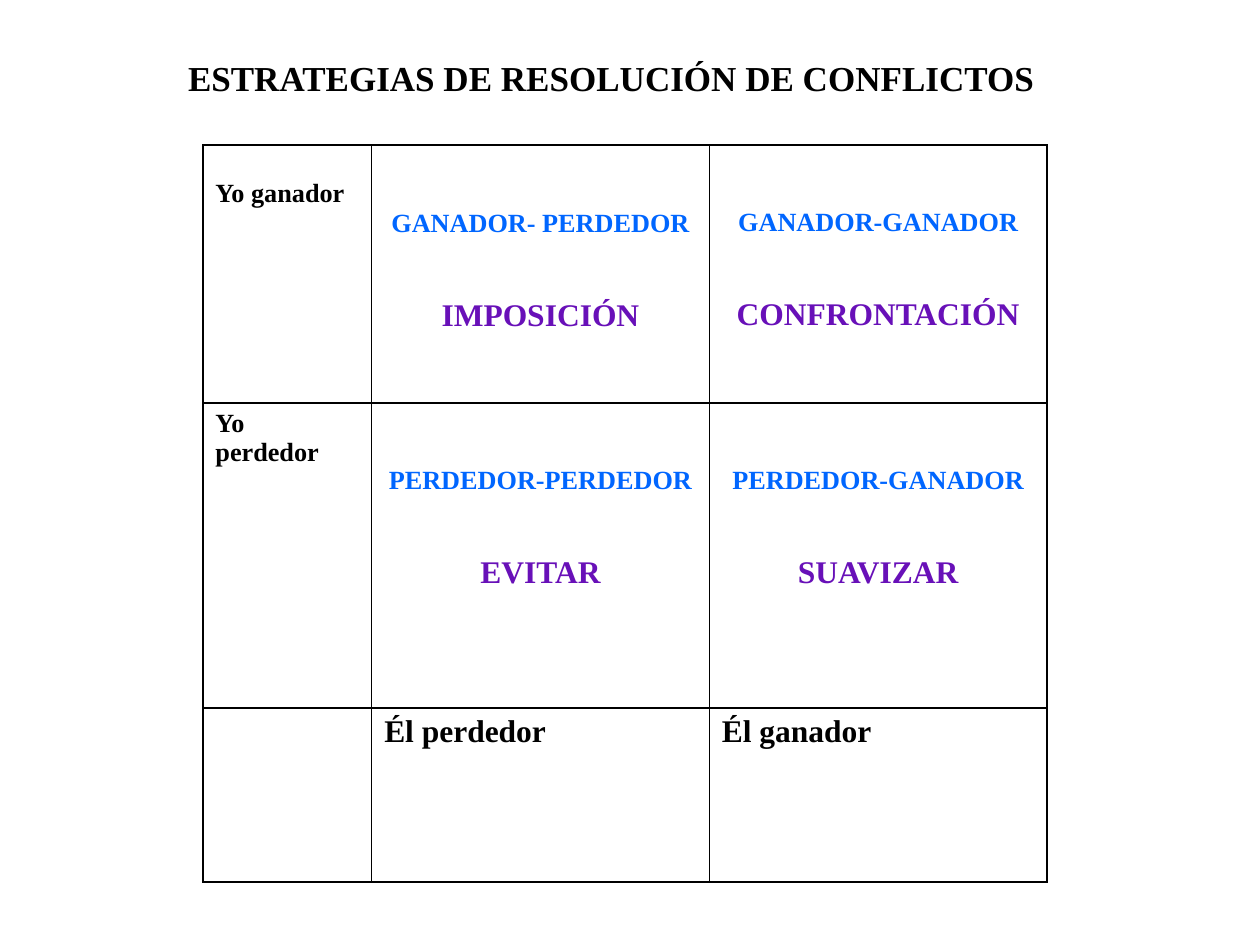
"""Build a slide with a grid of conflict resolution strategies."""
import pptx
import pptx.util
import pptx.dml.color
import pptx.enum.text
import pptx.oxml

HUES = {"black": "000000", "blue": "0066FF", "violet": "6810B8"}
FONT = "Times New Roman"
ALIGN = pptx.enum.text.PP_ALIGN
NS = "http://schemas.openxmlformats.org/drawingml/2006/main"
WIDE, HIGH = 10, 7.5


def write(para, text, size=15, hue="black", align=ALIGN.LEFT, gap=0):
    para.alignment = align
    para.space_before = pptx.util.Pt(gap)
    run = para.add_run()
    run.text = text
    font = run.font
    font.name, font.size, font.bold = FONT, pptx.util.Pt(size), True
    font.color.rgb = pptx.dml.color.RGBColor.from_string(HUES[hue])


class Page:
    def __init__(self):
        self.deck = pptx.Presentation()
        self.deck.slide_width = pptx.util.Inches(WIDE)
        self.deck.slide_height = pptx.util.Inches(HIGH)
        self.slide = self.deck.slides.add_slide(self.deck.slide_layouts[6])

    def across(self, share):
        return round(self.deck.slide_width * share)

    def down(self, share):
        return round(self.deck.slide_height * share)

    def place(self, left, top, width, height):
        return (self.across(left), self.down(top),
                self.across(width), self.down(height))

    def title(self, text, box):
        frame = self.slide.shapes.add_textbox(*self.place(*box)).text_frame
        frame.word_wrap = False
        frame.margin_left = pptx.util.Inches(0.41)
        frame.margin_top = pptx.util.Inches(0.09)
        write(frame.paragraphs[0], text, size=20, align=ALIGN.CENTER)

    def grid(self, rows, left, top, cols, highs):
        box = self.place(left, top, sum(cols), sum(highs))
        table = self.slide.shapes.add_table(len(rows), len(cols), *box).table
        table.first_row = table.horz_banding = False
        for col, share in zip(table.columns, cols):
            col.width = self.across(share)
        for row, share in zip(table.rows, highs):
            row.height = self.down(share)
        for r, row in enumerate(rows):
            for c, (inset, lines) in enumerate(row):
                self.cell(table.cell(r, c), inset, lines)

    def cell(self, cell, inset, lines):
        self.border(cell)
        cell.fill.background()
        cell.margin_top = pptx.util.Inches(inset)
        frame = cell.text_frame
        for i, (text, style) in enumerate(lines):
            para = frame.add_paragraph() if i else frame.paragraphs[0]
            write(para, text, **style)

    def border(self, cell):
        props = cell._tc.get_or_add_tcPr()
        for side in "LRTB":
            props.append(pptx.oxml.parse_xml(
                f'<a:ln{side} xmlns:a="{NS}" w="12700"><a:solidFill>'
                f'<a:srgbClr val="{HUES["black"]}"/></a:solidFill></a:ln{side}>'))


def label(*lines, inset=0.05, size=15):
    return inset, [(line, {"size": size}) for line in lines]


def plan(kind, name, inset=0.5):
    return inset, [
        (kind, {"hue": "blue", "align": ALIGN.CENTER}),
        (name, {"size": 18, "hue": "violet", "align": ALIGN.CENTER, "gap": 34.5})]


def main():
    page = Page()
    page.title("ESTRATEGIAS DE RESOLUCIÓN DE CONFLICTOS",
               (1.05 / WIDE, 0.36 / HIGH, 7.29 / WIDE, 0.63 / HIGH))
    rows = [
        [label("Yo ganador", inset=0.27),
         plan("GANADOR- PERDEDOR", "IMPOSICIÓN", inset=0.51),
         plan("GANADOR-GANADOR", "CONFRONTACIÓN")],
        [label("Yo", "perdedor"),
         plan("PERDEDOR-PERDEDOR", "EVITAR"),
         plan("PERDEDOR-GANADOR", "SUAVIZAR")],
        [label(), label("Él perdedor", size=18), label("Él ganador", size=18)],
    ]
    unit = 1.34 / WIDE
    page.grid(rows, 1.61 / WIDE, 1.15 / HIGH, [unit, 2 * unit, 2 * unit],
              [high / HIGH for high in (2.05, 2.42, 1.38)])
    page.deck.save("out.pptx")


if __name__ == "__main__":
    main()
